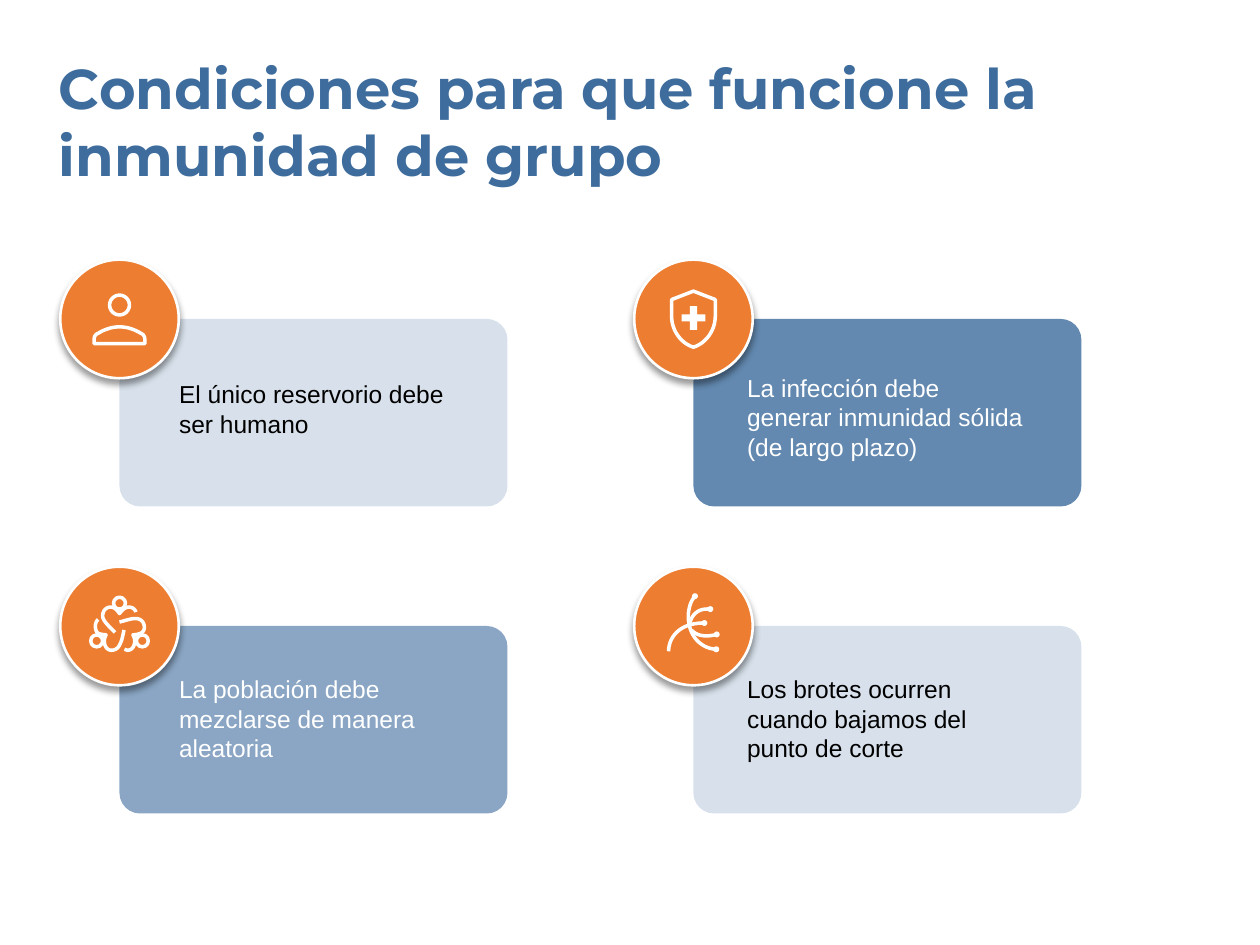
"""Build the slide on the conditions that herd immunity needs."""
from lxml import etree
from pptx import Presentation
from pptx.dml.color import RGBColor
from pptx.enum.shapes import MSO_SHAPE
from pptx.enum.text import MSO_AUTO_SIZE
from pptx.oxml.ns import qn
from pptx.util import Cm, Pt

ROUNDED, OVAL, CROSS = MSO_SHAPE.ROUNDED_RECTANGLE, MSO_SHAPE.OVAL, MSO_SHAPE.CROSS
FIT_TEXT = MSO_AUTO_SIZE.SHAPE_TO_FIT_TEXT
BLUE, ORANGE, WHITE, BLACK = "3D6C9D", "ED7D31", "FFFFFF", "000000"

TITLE = "Condiciones para que funcione la inmunidad de grupo"
COLUMNS, ROWS = (2.41, 13.98), (6.43, 12.62)
CARD_WIDTH, CARD_HEIGHT, BADGE = 7.82, 3.78, 2.39
TEXT_LEFTS = (3.61, 15.06)
ICON_UNIT, STROKE = 0.01, 2

# Icon coordinates are tenths of a millimetre from the badge centre.
PERSON = {
    "strokes": [[(-51, 50), [(-51, 41)], [(-51, 35), (-48, 31), (-43, 29)],
                 [(-30, 21), (-15, 16), (0, 16)], [(15, 16), (30, 21), (43, 29)],
                 [(48, 31), (51, 35), (51, 41)], [(51, 50)], [(-51, 50)]]],
    "rings": [(0, -28, 20)],
}
SHIELD = {
    "strokes": [[(0, -56), [(44, -39)], [(44, -5)], [(44, 24), (24, 50), (0, 57)],
                 [(-24, 50), (-44, 24), (-44, -5)], [(-44, -39)], [(0, -56)]]],
    "crosses": [(0, -2, 24)],
}
MIXING = {
    "strokes": [
        [(-43, -13), [(-50, -8), (-50, 5), (-46, 12)], [(-42, 17), (-34, 17), (-27, 18)],
         [(-34, 28), (-31, 49), (-16, 49)], [(1, 49), (5, 28), (9, 8)]],
        [(-9, 13), [(-22, 0), (-34, -11), (-34, -20)], [(-34, -31), (-27, -38), (-18, -38)],
         [(-10, -38), (-5, -32), (0, -25)], [(5, -32), (11, -38), (19, -38)],
         [(26, -38), (31, -34), (33, -28)]],
        [(0, -8), [(13, -11), (22, -15), (32, -15)], [(43, -15), (50, -8), (50, 3)],
         [(50, 15), (38, 17), (27, 18)], [(34, 28), (31, 49), (16, 49)], [(10, 47)]],
    ],
    "rings": [(0, -46, 12), (-46, 30, 12), (46, 30, 12)],
}
BRANCHES = {
    "strokes": [
        [(-50, 51), [(-50, 25), (-32, 5), (-8, -2)], [(2, -5), (12, -6), (22, -6)]],
        [(3, -60), [(-10, -45), (-13, -20), (-8, 0)], [(-2, 27), (20, 46), (46, 47)]],
        [(-8, -3), [(-3, -26), (12, -36), (34, -34)]],
        [(-4, 8), [(6, 20), (25, 23), (47, 17)]],
    ],
    "dots": [(3, -60, 6), (34, -34, 6), (22, -6, 6), (47, 17, 6), (46, 47, 6)],
}
CONDITIONS = [
    ("El único reservorio debe ser humano", 0, 0, 20, BLACK, 7.65, 5.66, 1.19, PERSON),
    ("La infección debe generar inmunidad sólida (de largo plazo)",
     1, 0, 80, WHITE, 7.52, 5.69, 1.8, SHIELD),
    ("La población debe mezclarse de manera aleatoria",
     0, 1, 60, WHITE, 13.59, 6.25, 1.8, MIXING),
    ("Los brotes ocurren cuando bajamos del punto de corte",
     1, 1, 20, BLACK, 13.59, 5.69, 1.8, BRANCHES),
]


def rgb(color):
    """Turn a hex string into a colour."""
    return RGBColor.from_string(color)


def paint(shape, fill=None, line=None, width=STROKE):
    """Set fill and outline, and drop the theme shadow."""
    shape.shadow.inherit = False
    if fill:
        shape.fill.solid()
        shape.fill.fore_color.rgb = rgb(fill)
    else:
        shape.fill.background()
    if line:
        shape.line.color.rgb = rgb(line)
        shape.line.width = Pt(width)
    else:
        shape.line.fill.background()


def set_alpha(color_node, percent):
    """Make a colour element partly transparent."""
    etree.SubElement(color_node, qn("a:alpha")).set("val", str(percent * 1000))


def add_text(slide, words, box, size, font, color, bold=False):
    """Add a wrapped text box without margins."""
    frame = slide.shapes.add_textbox(*map(Cm, box)).text_frame
    frame.margin_left = frame.margin_right = frame.margin_top = frame.margin_bottom = 0
    frame.word_wrap, frame.auto_size = True, FIT_TEXT
    run = frame.paragraphs[0].add_run()
    run.text = words
    run.font.size, run.font.name, run.font.bold = Pt(size), font, bold
    run.font.color.rgb = rgb(color)


def add_card(slide, left, top, opacity):
    """Add a translucent rounded card."""
    card = slide.shapes.add_shape(ROUNDED, *map(Cm, (left, top, CARD_WIDTH, CARD_HEIGHT)))
    card.adjustments[0] = 0.11
    paint(card, BLUE)
    set_alpha(card.fill._xPr.find(qn("a:solidFill"))[0], opacity)


def add_round(slide, kind, x, y, radius):
    """Add a preset shape centred on a point."""
    box = (x - radius, y - radius, 2 * radius, 2 * radius)
    return slide.shapes.add_shape(kind, *map(Cm, box))


def add_badge(slide, x, y):
    """Add a shadowed circle."""
    badge = add_round(slide, OVAL, x, y, BADGE / 2)
    paint(badge, ORANGE, WHITE, 1.5)
    effects = badge._element.spPr.find(qn("a:effectLst"))
    shadow = etree.SubElement(effects, qn("a:outerShdw"), blurRad=str(Pt(4)),
                              dist=str(Pt(3)), dir="5400000", rotWithShape="0")
    set_alpha(etree.SubElement(shadow, qn("a:srgbClr"), val=BLACK), 40)


def bezier(points, t):
    """Find the point at t on a Bézier curve of any degree."""
    while len(points) > 1:
        points = [(a + (c - a) * t, b + (d - b) * t)
                  for (a, b), (c, d) in zip(points, points[1:])]
    return points[0]


def trace(stroke):
    """List the points along a stroke of lines and curves."""
    points = [stroke[0]]
    for segment in stroke[1:]:
        control = [points[-1], *segment]
        steps = 1 if len(segment) == 1 else 12
        points += [bezier(control, step / steps) for step in range(1, steps + 1)]
    return points


def add_icon(slide, x, y, icon):
    """Draw an icon around the badge centre."""
    def place(point):
        return Cm(x + point[0] * ICON_UNIT), Cm(y + point[1] * ICON_UNIT)

    strokes = [[place(point) for point in trace(stroke)] for stroke in icon["strokes"]]
    builder = slide.shapes.build_freeform(*strokes[0][0])
    for stroke in strokes:
        builder.move_to(*stroke[0])
        builder.add_line_segments(stroke[1:], close=stroke[0] == stroke[-1])
    paint(builder.convert_to_shape(), line=WHITE)
    for part, kind, fill, line in (("rings", OVAL, None, WHITE), ("dots", OVAL, WHITE, None),
                                   ("crosses", CROSS, WHITE, None)):
        for dx, dy, radius in icon.get(part, []):
            shape = add_round(slide, kind, x + dx * ICON_UNIT, y + dy * ICON_UNIT,
                              radius * ICON_UNIT)
            paint(shape, fill, line)
            if kind == CROSS:
                shape.adjustments[0] = 0.35


def main():
    """Build and save the slide."""
    deck = Presentation()
    deck.slide_width, deck.slide_height = Cm(25.4), Cm(19.05)
    slide = deck.slides.add_slide(deck.slide_layouts[6])
    add_text(slide, TITLE, (1.19, 1.07, 21.72, 2.74), 32, "Montserrat", BLUE, True)
    for words, column, row, opacity, color, top, width, height, icon in CONDITIONS:
        corner = COLUMNS[column], ROWS[row]
        add_card(slide, *corner, opacity)
        add_badge(slide, *corner)
        add_icon(slide, *corner, icon)
        add_text(slide, words, (TEXT_LEFTS[column], top, width, height), 14, "Arial", color)
    deck.save("out.pptx")


if __name__ == "__main__":
    main()
